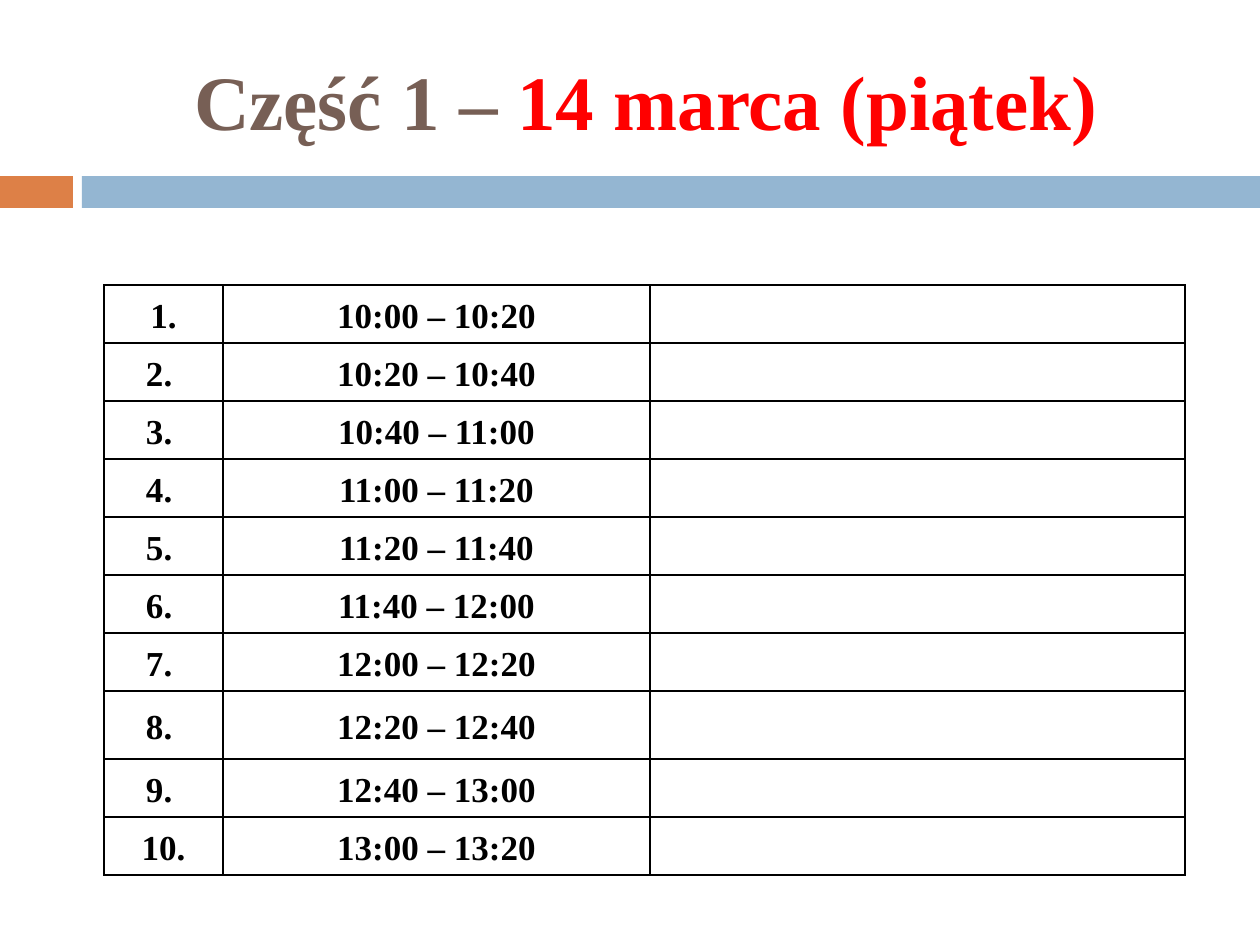
import pptx
import pptx.util
import pptx.dml.color
import pptx.enum.shapes
import pptx.enum.text
import pptx.oxml

FONT = "Times New Roman"
TITLE = [("Część 1 – ", "775F55"), ("14 marca (piątek)", "FF0000")]
BARS = [((0, 176, 73, 32), "DD8047"), ((82, 176, 1178, 32), "94B6D2")]
SLOTS = [
    ("1.", "10:00 – 10:20"),
    ("2. ", "10:20 – 10:40"),
    ("3. ", "10:40 – 11:00"),
    ("4. ", "11:00 – 11:20"),
    ("5. ", "11:20 – 11:40"),
    ("6. ", "11:40 – 12:00"),
    ("7. ", "12:00 – 12:20"),
    ("8. ", "12:20 – 12:40"),
    ("9. ", "12:40 – 13:00"),
    ("10.", "13:00 – 13:20"),
]
COLS = [119, 427, 535]
ROW = 58
TALL = {7: 68}
MIDDLE = pptx.enum.text.MSO_ANCHOR.MIDDLE
CENTER = pptx.enum.text.PP_ALIGN.CENTER


def px(n):
    return pptx.util.Emu(round(n * 914400 / 126))


def color(code):
    return pptx.dml.color.RGBColor.from_string(code)


def style(para, size):
    para.alignment = CENTER
    para.font.name = FONT
    para.font.size = pptx.util.Pt(size)
    para.font.bold = True


def border(cell):
    props = cell._tc.get_or_add_tcPr()
    for i, side in enumerate("LRTB"):
        line = pptx.oxml.parse_xml(
            f'<a:ln{side} xmlns:a="http://schemas.openxmlformats.org/drawingml/2006/main"'
            ' w="12700"><a:solidFill><a:srgbClr val="000000"/></a:solidFill>'
            f'</a:ln{side}>')
        props.insert(i, line)


def add_bars(slide):
    for box, code in BARS:
        bar = slide.shapes.add_shape(
            pptx.enum.shapes.MSO_SHAPE.RECTANGLE, *map(px, box))
        bar.shadow.inherit = False
        bar.fill.solid()
        bar.fill.fore_color.rgb = color(code)
        bar.line.fill.background()


def add_title(slide):
    title = slide.shapes.title
    title.left, title.top, title.width, title.height = map(px, (84, 32, 1124, 136))
    title.text_frame.vertical_anchor = MIDDLE
    para = title.text_frame.paragraphs[0]
    style(para, 44)
    for text, code in TITLE:
        run = para.add_run()
        run.text = text
        run.font.color.rgb = color(code)


def add_slots(slide):
    rows = [TALL.get(i, ROW) for i in range(len(SLOTS))]
    table = slide.shapes.add_table(
        len(rows), len(COLS), px(104), px(285), px(sum(COLS)), px(sum(rows))).table
    table.first_row = table.horz_banding = False
    for col, width in zip(table.columns, COLS):
        col.width = px(width)
    for r, height in enumerate(rows):
        table.rows[r].height = px(height)
        for c, text in enumerate(SLOTS[r] + ("",)):
            cell = table.cell(r, c)
            cell.fill.background()
            border(cell)
            cell.vertical_anchor = MIDDLE
            cell.margin_left = cell.margin_right = px(9)
            cell.margin_top = cell.margin_bottom = 0
            para = cell.text_frame.paragraphs[0]
            style(para, 20)
            para.line_spacing = 1.15
            para.font.color.rgb = color("000000")
            if text:
                para.add_run().text = text


def main():
    deck = pptx.Presentation()
    deck.slide_width, deck.slide_height = px(1260), px(945)
    slide = deck.slides.add_slide(deck.slide_layouts[5])
    add_bars(slide)
    add_title(slide)
    add_slots(slide)
    deck.save("out.pptx")


if __name__ == "__main__":
    main()
